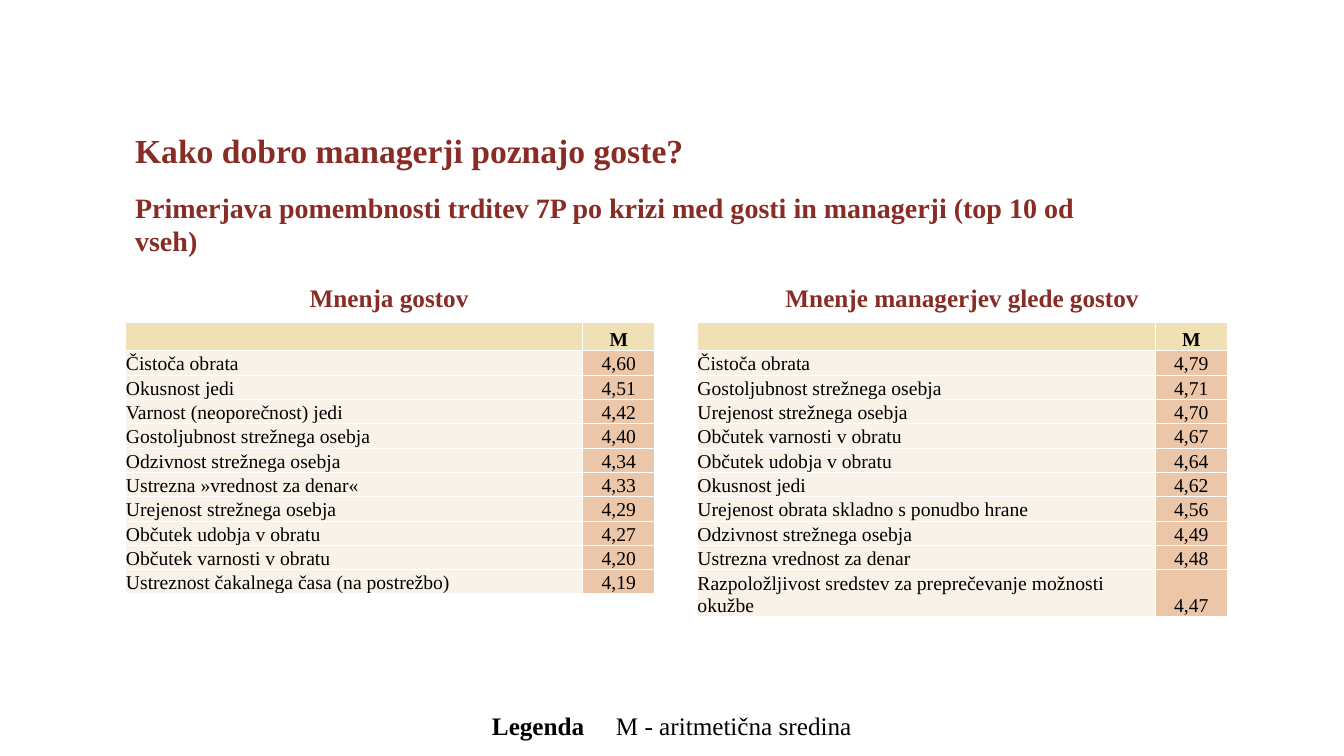
from lxml import etree
from pptx import Presentation
from pptx.dml.color import RGBColor
from pptx.enum.text import MSO_ANCHOR, MSO_AUTO_SIZE, PP_ALIGN
from pptx.oxml.ns import qn
from pptx.util import Pt

LEFT, CENTER = PP_ALIGN.LEFT, PP_ALIGN.CENTER
TOP, BOTTOM = MSO_ANCHOR.TOP, MSO_ANCHOR.BOTTOM
NO_AUTOFIT = MSO_AUTO_SIZE.NONE
TITLE_ONLY = 5

FONT = "Times New Roman"
RED, BLACK, WHITE = "882C25", "000000", "FFFFFF"
HEADER_FILL, LABEL_FILL, VALUE_FILL = "F0E0B5", "F8F2E9", "ECC6A9"

TABLE_TOP = 230.4
COLUMN_WIDTHS = (327, 51.5)
ROW_HEIGHT, TALL_ROW_HEIGHT = 17.4, 33.5

GUEST_RATINGS = [
    ("Čistoča obrata", "4,60"),
    ("Okusnost jedi", "4,51"),
    ("Varnost (neoporečnost) jedi", "4,42"),
    ("Gostoljubnost strežnega osebja", "4,40"),
    ("Odzivnost strežnega osebja", "4,34"),
    ("Ustrezna »vrednost za denar«", "4,33"),
    ("Urejenost strežnega osebja", "4,29"),
    ("Občutek udobja v obratu", "4,27"),
    ("Občutek varnosti v obratu", "4,20"),
    ("Ustreznost čakalnega časa (na postrežbo)", "4,19"),
]
MANAGER_RATINGS = [
    ("Čistoča obrata", "4,79"),
    ("Gostoljubnost strežnega osebja", "4,71"),
    ("Urejenost strežnega osebja", "4,70"),
    ("Občutek varnosti v obratu", "4,67"),
    ("Občutek udobja v obratu", "4,64"),
    ("Okusnost jedi", "4,62"),
    ("Urejenost obrata skladno s ponudbo hrane", "4,56"),
    ("Odzivnost strežnega osebja", "4,49"),
    ("Ustrezna vrednost za denar", "4,48"),
    ("Razpoložljivost sredstev za preprečevanje možnosti okužbe", "4,47"),
]


def set_color(color_format, value):
    color_format.rgb = RGBColor.from_string(value)


def apply_format(target, **values):
    for name, value in values.items():
        setattr(target, name, value)


class SlideBuilder:
    def __init__(self, slide):
        self.slide = slide

    def run(self, paragraph, text, size, color, bold=False):
        run = paragraph.add_run()
        run.text = text
        apply_format(run.font, name=FONT, size=Pt(size), bold=bold)
        set_color(run.font.color, color)
        return run

    def title(self, box, heading, subheading):
        shape = self.slide.shapes.title
        shape.left, shape.top, shape.width, shape.height = map(Pt, box)
        frame = shape.text_frame
        apply_format(frame, word_wrap=True, auto_size=NO_AUTOFIT, vertical_anchor=TOP)
        first = frame.paragraphs[0]
        second = frame.add_paragraph()
        apply_format(first, alignment=LEFT)
        apply_format(second, alignment=LEFT, space_before=Pt(14))
        self.run(first, heading, 24, RED, bold=True)
        self.run(second, subheading, 20, RED, bold=True)

    def text_box(self, box, wrap=True):
        """Add a centred text box and return its paragraph."""
        frame = self.slide.shapes.add_textbox(*map(Pt, box)).text_frame
        frame.word_wrap = wrap
        paragraph = frame.paragraphs[0]
        paragraph.alignment = CENTER
        return paragraph

    def caption(self, box, text):
        self.run(self.text_box(box, wrap=False), text, 18, RED, bold=True)

    def legend(self, box, term, meaning):
        paragraph = self.text_box(box)
        self.run(paragraph, term, 18, BLACK, bold=True)
        gap = self.run(paragraph, " ", 18, BLACK)
        gap.font._element.set("spc", "1800")
        self.run(paragraph, meaning, 18, BLACK)

    def borders(self, cell):
        properties = cell._tc.get_or_add_tcPr()
        for side in ("a:lnL", "a:lnR", "a:lnT", "a:lnB"):
            line = etree.SubElement(properties, qn(side), w=str(Pt(1)))
            fill = etree.SubElement(line, qn("a:solidFill"))
            etree.SubElement(fill, qn("a:srgbClr"), val=WHITE)

    def cell(self, cell, text, fill, alignment, bold, margin):
        self.borders(cell)
        cell.fill.solid()
        set_color(cell.fill.fore_color, fill)
        apply_format(cell, vertical_anchor=BOTTOM, margin_left=Pt(margin),
                     margin_right=Pt(margin), margin_top=Pt(margin), margin_bottom=0)
        paragraph = cell.text_frame.paragraphs[0]
        paragraph.alignment = alignment
        self.run(paragraph, text, 14, BLACK, bold)

    def rating_table(self, left, ratings, last_height, margin):
        rows = [("", "M"), *ratings]
        heights = [ROW_HEIGHT] * len(ratings) + [last_height]
        table = self.slide.shapes.add_table(
            len(rows), len(COLUMN_WIDTHS), Pt(left), Pt(TABLE_TOP),
            Pt(sum(COLUMN_WIDTHS)), Pt(sum(heights))).table
        for column, width in zip(table.columns, COLUMN_WIDTHS):
            column.width = Pt(width)
        for index, (texts, height) in enumerate(zip(rows, heights)):
            table.rows[index].height = Pt(height)
            header = index == 0
            fills = (HEADER_FILL, HEADER_FILL) if header else (LABEL_FILL, VALUE_FILL)
            for column, alignment in enumerate((LEFT, CENTER)):
                self.cell(table.cell(index, column), texts[column], fills[column],
                          alignment, header, 0 if header else margin)


def main():
    presentation = Presentation()
    presentation.slide_width, presentation.slide_height = Pt(960), Pt(540)
    slide = presentation.slides.add_slide(presentation.slide_layouts[TITLE_ONLY])
    builder = SlideBuilder(slide)
    builder.title((89.3, 89.5, 734.4, 95), "Kako dobro managerji poznajo goste?",
                  "Primerjava pomembnosti trditev 7P po krizi med gosti "
                  "in managerji (top 10 od vseh)")
    builder.rating_table(498.2, MANAGER_RATINGS, TALL_ROW_HEIGHT, margin=0)
    builder.rating_table(89.3, GUEST_RATINGS, ROW_HEIGHT, margin=0.7)
    builder.caption((213.8, 198, 128.2, 29), "Mnenja gostov")
    builder.caption((553, 198, 268.6, 29), "Mnenje managerjev glede gostov")
    builder.legend((38.2, 504, 883.4, 29), "Legenda", "M - aritmetična sredina")
    presentation.save("out.pptx")


if __name__ == "__main__":
    main()
